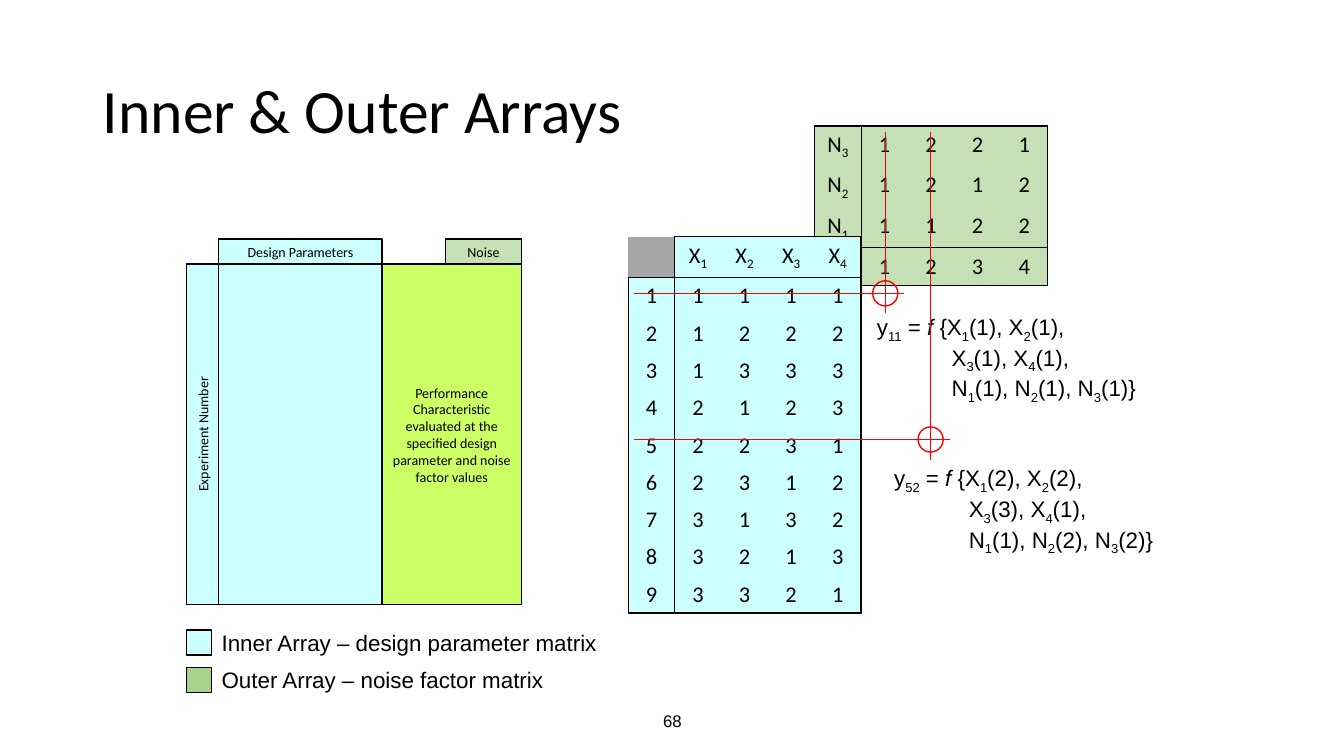
import pptx
import pptx.dml.color
import pptx.enum.shapes
import pptx.enum.text
import pptx.oxml.ns
import pptx.util
import lxml.etree

Inches, Pt = pptx.util.Inches, pptx.util.Pt
ALIGN, ANCHOR = pptx.enum.text.PP_ALIGN, pptx.enum.text.MSO_ANCHOR
SHAPE = pptx.enum.shapes.MSO_SHAPE
LINE = pptx.enum.shapes.MSO_CONNECTOR.STRAIGHT
COLORS = {"black": "000000", "red": "FF0000", "inner": "CCFFFF", "outer": "C5E0B4",
          "outer_key": "A9D18E", "result": "CCFF66", "inner_corner": "A5A5A5",
          "outer_corner": "E1E1E1"}

# Level of each factor: one row per experiment, one row per noise factor
DESIGN = ["1111", "1222", "1333", "2123", "2231", "2312", "3132", "3213", "3321"]
NOISE = {1: "1122", 2: "1212", 3: "1221"}


def color(name):
    return pptx.dml.color.RGBColor.from_string(COLORS[name])


def write(para, text, size, font="Calibri", align=ALIGN.LEFT):
    """Add text run by run; |1| is a subscript and *f* is italic."""
    para.alignment = align
    for index, piece in enumerate(text.split("|")):
        for part, words in enumerate(piece.split("*")):
            if not words:
                continue
            span = para.add_run()
            span.text = words
            span.font.size = Pt(size)
            span.font.name = font
            span.font.color.rgb = color("black")
            if part % 2:
                span.font.italic = True
            if index % 2:
                span._r.get_or_add_rPr().set("baseline", "-25000")


def add_text(page, box, text, size, align=ALIGN.LEFT, anchor=ANCHOR.TOP, wrap=True):
    frame = page.shapes.add_textbox(*map(Inches, box)).text_frame
    frame.word_wrap = wrap
    frame.vertical_anchor = anchor
    write(frame.paragraphs[0], text, size, "Arial", align)
    return frame


def add_block(page, box, fill, text="", vertical=False):
    block = page.shapes.add_shape(SHAPE.RECTANGLE, *map(Inches, box))
    block.shadow.inherit = False
    block.fill.solid()
    block.fill.fore_color.rgb = color(fill)
    block.line.color.rgb = color("black")
    block.line.width = Pt(1)
    frame = block.text_frame
    frame.margin_left = frame.margin_right = Inches(0.05)
    frame.word_wrap = True
    frame.vertical_anchor = ANCHOR.MIDDLE
    if vertical:
        frame._txBody.bodyPr.set("vert", "vert270")
    write(frame.paragraphs[0], text, 10, align=ALIGN.CENTER)


def add_line(page, start_x, start_y, end_x, end_y):
    line = page.shapes.add_connector(LINE, *map(Inches, (start_x, start_y, end_x, end_y)))
    line.line.color.rgb = color("red")
    line.line.width = Pt(0.5)
    lxml.etree.SubElement(line._element.spPr, pptx.oxml.ns.qn("a:effectLst"))


def add_border(cell, side, visible):
    border = lxml.etree.SubElement(cell._tc.get_or_add_tcPr(), pptx.oxml.ns.qn("a:ln" + side))
    border.set("w", str(Pt(1)))
    if visible:
        fill = lxml.etree.SubElement(border, pptx.oxml.ns.qn("a:solidFill"))
        tone = lxml.etree.SubElement(fill, pptx.oxml.ns.qn("a:srgbClr"))
        tone.set("val", COLORS["black"])
    else:
        lxml.etree.SubElement(border, pptx.oxml.ns.qn("a:noFill"))


def array_table(page, box, rows, heights, number_row, fill):
    """Matrix whose labels, numbers and levels are each outlined as one region."""
    columns = len(rows[0])
    table = page.shapes.add_table(len(rows), columns, *map(Inches, box)).table
    table.first_row = table.horz_banding = False
    for column in table.columns:
        column.width = Inches(box[2] / columns)

    def region(row, column):
        inside = 0 <= row < len(rows) and 0 <= column < columns
        if not inside or (row == number_row and column == 0):
            return None
        return row == number_row, column == 0

    for row, values in enumerate(rows):
        table.rows[row].height = Inches(heights[row])
        for column, value in enumerate(values):
            cell = table.cell(row, column)
            here = region(row, column)
            for side, down, right in (("L", 0, -1), ("R", 0, 1), ("T", -1, 0), ("B", 1, 0)):
                add_border(cell, side, here != region(row + down, column + right))
            cell.fill.solid()
            cell.fill.fore_color.rgb = color(fill if here else fill + "_corner")
            if here:
                write(cell.text_frame.paragraphs[0], value, 16, align=ALIGN.CENTER)
            else:
                cell.margin_top = cell.margin_bottom = 0


def layout_diagram(page, box):
    left, top, width, height = box
    label, head, design, noise = 0.32, 0.25, 1.62, 0.75
    body_top, body_height = top + head, height - head
    result_left = left + label + design
    add_block(page, (left, body_top, label, body_height), "inner", "Experiment Number", True)
    add_block(page, (left + label, body_top, design, body_height), "inner")
    add_block(page, (left + label, top, design, head), "inner", "Design Parameters")
    add_block(page, (left + width - noise, top, noise, head), "outer", "Noise")
    add_block(page, (result_left, body_top, left + width - result_left, body_height), "result",
              "Performance Characteristic evaluated at the specified design parameter "
              "and noise factor values")


def legend(page, box):
    left, top, width, step = box
    entries = [("inner", "Inner Array – design parameter matrix", 3.94),
               ("outer_key", "Outer Array – noise factor matrix", 3.41)]
    for index, (fill, text, length) in enumerate(entries):
        y = top + index * step
        add_block(page, (left, y, width, width), fill)
        add_text(page, (left + width, y - 0.06, length, 0.37), text, 16, wrap=False)


def reading(page, box, center, run, trial):
    """Cross hair for one result, with its formula in the box."""
    x, y = center
    add_line(page, x + 0.19, y, 6.29, y)
    add_line(page, x, 1.31, x, y + 0.2)
    ring = page.shapes.add_shape(SHAPE.OVAL, *map(Inches, (x - 0.125, y - 0.125, 0.25, 0.25)))
    ring.shadow.inherit = False
    ring.fill.background()
    ring.line.color.rgb = color("red")
    ring.line.width = Pt(1)

    levels = [f"X|{index}|({level})" for index, level in enumerate(DESIGN[run - 1], 1)]
    noises = [f"N|{index}|({values[trial - 1]})" for index, values in NOISE.items()]
    frame = add_text(page, box, f"y|{run}{trial}| = *f *{{{', '.join(levels[:2])},", 16)
    for text in (", ".join(levels[2:]) + ",", ", ".join(noises) + "}"):
        para = frame.add_paragraph()
        para._p.get_or_add_pPr().set("marL", str(Inches(0.74)))
        write(para, text, 16, "Arial")


def title(page, box, text):
    holder = page.shapes.title
    holder.left, holder.top, holder.width, holder.height = map(Inches, box)
    holder.text_frame.vertical_anchor = ANCHOR.MIDDLE
    para = holder.text_frame.paragraphs[0]
    para.line_spacing = 0.9
    write(para, text, 44)


def main():
    deck = pptx.Presentation()
    deck.slide_width, deck.slide_height = Inches(13.33), Inches(7.5)
    page = deck.slides.add_slide(deck.slide_layouts[5])

    # Outer array, behind the inner one
    noise_rows = [[f"N|{index}|", *NOISE[index]] for index in (3, 2, 1)]
    array_table(page, (8.08, 1.25, 2.31, 1.58), noise_rows + [["", *"1234"]],
                [0.4] * 3 + [0.37], 3, "outer")

    # Heading, page number and left diagram
    title(page, (0.92, 0.4, 11.5, 1.45), "Inner & Outer Arrays")
    add_text(page, (4.42, 6.95, 4.5, 0.4), "68", 12, ALIGN.CENTER, ANCHOR.MIDDLE)
    layout_diagram(page, (1.85, 2.37, 3.32, 3.63))
    legend(page, (1.85, 6.25, 0.25, 0.37))

    # Inner array
    design_rows = [[str(run), *levels] for run, levels in enumerate(DESIGN, 1)]
    header = ["", *(f"X|{index}|" for index in range(1, 5))]
    array_table(page, (6.23, 2.35, 2.31, 3.7), [header] + design_rows,
                [0.4] + [0.37] * 9, 0, "inner")

    # Two sample results
    reading(page, (8.6, 3.06, 2.84, 0.91), (8.78, 2.91), 1, 1)
    reading(page, (8.77, 4.56, 2.84, 0.91), (9.23, 4.36), 5, 2)
    deck.save("out.pptx")


if __name__ == "__main__":
    main()
